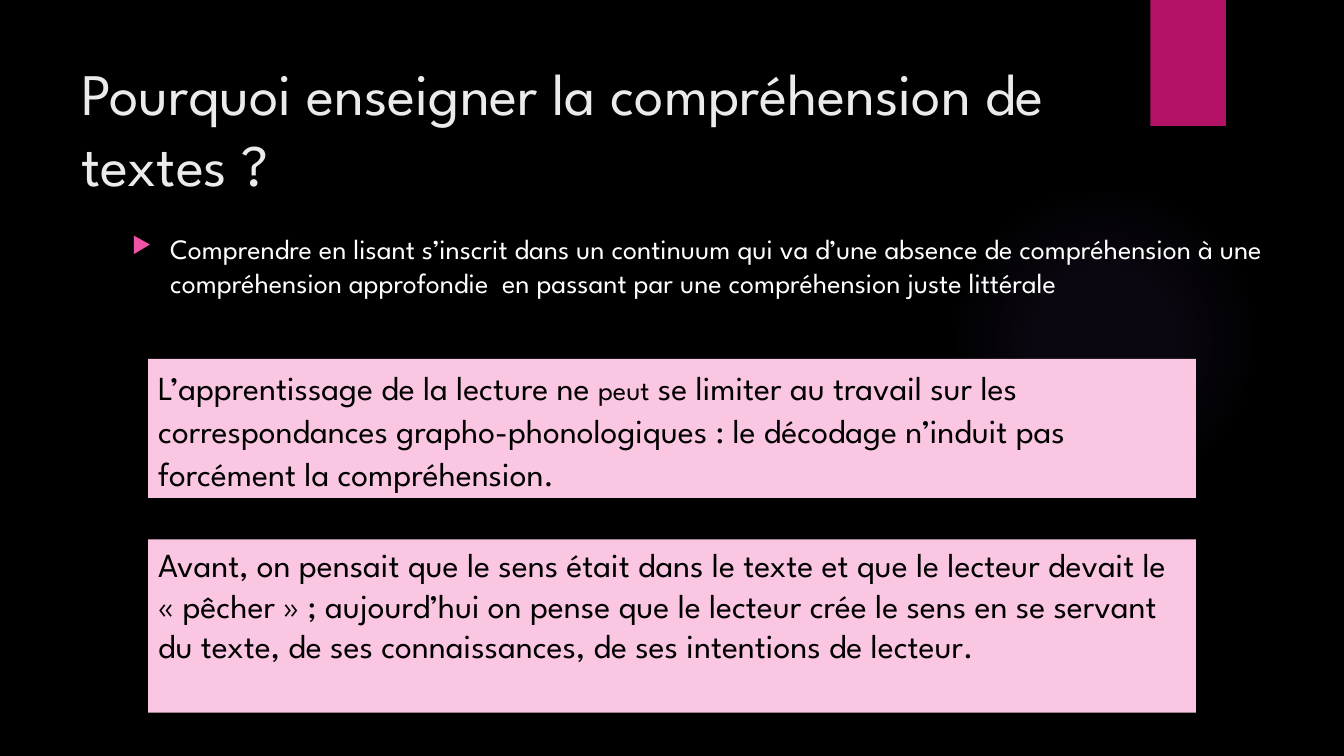
"""Build the slide on why text comprehension is taught."""
from lxml.etree import SubElement
from pptx import Presentation
from pptx.dml.color import RGBColor
from pptx.enum.shapes import MSO_SHAPE
from pptx.enum.text import MSO_ANCHOR, MSO_AUTO_SIZE, PP_ALIGN
from pptx.oxml.ns import qn
from pptx.util import Inches, Pt

BLACK = RGBColor(0x00, 0x00, 0x00)
WHITE = RGBColor(0xFF, 0xFF, 0xFF)
TITLE_GREY = RGBColor(0xEB, 0xEB, 0xEB)
MAGENTA = RGBColor(0xB3, 0x11, 0x66)
BULLET_PINK = RGBColor(0xEF, 0x53, 0xA5)
PALE_PINK = RGBColor(0xFA, 0xC6, 0xE1)
GLOW_VIOLET = RGBColor(0x9B, 0x6B, 0xF2)
FONT = "League Spartan"

SLIDE_WIDTH, SLIDE_HEIGHT = 13.33, 7.5
TITLE = "Pourquoi enseigner la compréhension de textes ?"
STATEMENT = (
    "Comprendre en lisant s’inscrit dans un continuum qui va d’une absence de compréhension "
    "à une compréhension approfondie  en passant par une compréhension juste littérale"
)
PANEL_LEFT, PANEL_WIDTH = 1.47, SLIDE_WIDTH - 2 * 1.47
PANELS = [
    {
        "top": 3.56, "height": 1.38, "spacing": 1.07,
        "runs": [
            ("L’apprentissage de la lecture ne ", 24),
            ("peut", 20),
            (" se limiter au travail sur les correspondances grapho-phonologiques : "
             "le décodage n’induit pas forcément la compréhension.", 24),
        ],
    },
    {
        "top": 5.35, "height": 1.72, "spacing": 1.0,
        "runs": [
            ("Avant, on pensait que le sens était dans le texte et que le lecteur devait le "
             "« pêcher » ; aujourd’hui on pense que le lecteur crée le sens en se servant "
             "du texte, de ses connaissances, de ses intentions de lecteur.", 24),
        ],
    },
]
GLOW_STOPS = [(0, 7), (36, 6), (69, 0)]


def add_plain_shape(slide, preset, box, color=None):
    shape = slide.shapes.add_shape(preset, *map(Inches, box))
    shape.shadow.inherit = False
    shape.line.fill.background()
    if color is not None:
        shape.fill.solid()
        shape.fill.fore_color.rgb = color
    return shape


def add_glow(slide, box):
    glow = add_plain_shape(slide, MSO_SHAPE.OVAL, box)
    properties = glow._element.spPr
    gradient = SubElement(properties, qn("a:gradFill"), rotWithShape="1")
    stops = SubElement(gradient, qn("a:gsLst"))
    for position, opacity in GLOW_STOPS:
        stop = SubElement(stops, qn("a:gs"), pos=str(position * 1000))
        color = SubElement(stop, qn("a:srgbClr"), val=str(GLOW_VIOLET))
        SubElement(color, qn("a:alpha"), val=str(opacity * 1000))
    circle = SubElement(gradient, qn("a:path"), {"path": "circle"})
    SubElement(circle, qn("a:fillToRect"), dict.fromkeys("ltrb", "50000"))
    properties.find(qn("a:prstGeom")).addnext(gradient)


def add_bullet(paragraph, character, color):
    properties = paragraph._p.get_or_add_pPr()
    indent = Inches(0.38)
    properties.set("marL", str(indent))
    properties.set("indent", str(-indent))
    bullet_color = SubElement(properties, qn("a:buClr"))
    SubElement(bullet_color, qn("a:srgbClr"), val=str(color))
    SubElement(properties, qn("a:buSzPct"), val="80000")
    SubElement(properties, qn("a:buChar"), char=character)


def write_text(shape, runs, color, spacing=None, anchor=MSO_ANCHOR.TOP, bullet=None):
    frame = shape.text_frame
    frame.word_wrap = True
    frame.auto_size = MSO_AUTO_SIZE.NONE
    frame.vertical_anchor = anchor
    paragraph = frame.paragraphs[0]
    paragraph.alignment = PP_ALIGN.LEFT
    if spacing:
        paragraph.line_spacing = spacing
    if bullet:
        add_bullet(paragraph, bullet, BULLET_PINK)
    for text, size in runs:
        run = paragraph.add_run()
        run.text = text
        run.font.name = FONT
        run.font.size = Pt(size)
        run.font.color.rgb = color


def main():
    presentation = Presentation()
    presentation.slide_width = Inches(SLIDE_WIDTH)
    presentation.slide_height = Inches(SLIDE_HEIGHT)
    slide = presentation.slides.add_slide(presentation.slide_layouts[6])
    slide.background.fill.solid()
    slide.background.fill.fore_color.rgb = BLACK

    add_glow(slide, (9.41, 1.83, 3.08, 3.08))
    add_plain_shape(slide, MSO_SHAPE.RECTANGLE, (11.41, 0, 0.75, 1.25), MAGENTA)

    title = slide.shapes.add_textbox(*map(Inches, (0.71, 0.5, 10.29, 1.53)))
    write_text(title, [(TITLE, 42)], TITLE_GREY, anchor=MSO_ANCHOR.MIDDLE)
    statement = slide.shapes.add_textbox(*map(Inches, (1.21, 2.25, 11.58, 1.31)))
    write_text(statement, [(STATEMENT, 20)], WHITE, bullet="▶")

    for panel in PANELS:
        box = (PANEL_LEFT, panel["top"], PANEL_WIDTH, panel["height"])
        shape = add_plain_shape(slide, MSO_SHAPE.RECTANGLE, box, PALE_PINK)
        write_text(shape, panel["runs"], BLACK, spacing=panel["spacing"])

    presentation.save("out.pptx")


if __name__ == "__main__":
    main()
